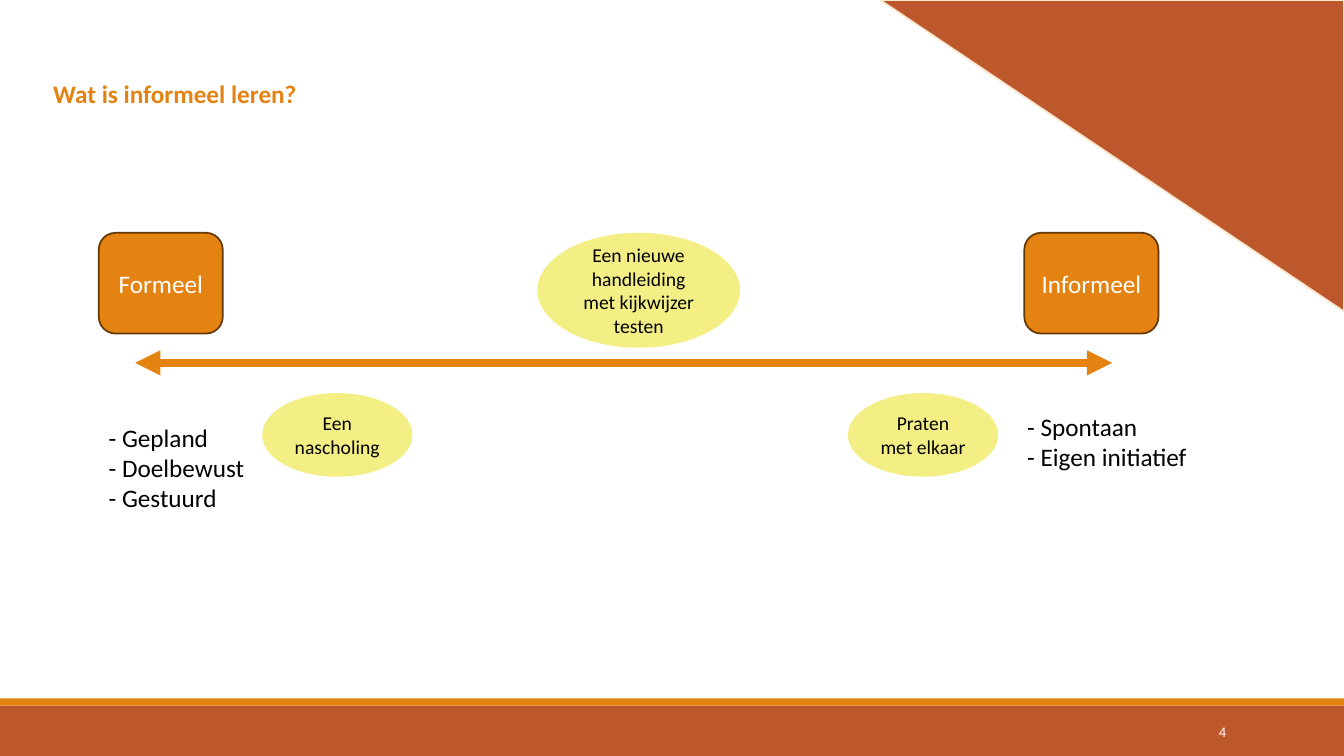
from lxml import etree
from pptx import Presentation
from pptx.dml.color import RGBColor
from pptx.enum.shapes import MSO_CONNECTOR, MSO_SHAPE as SHAPE
from pptx.enum.text import MSO_ANCHOR as ANCHOR, PP_ALIGN as ALIGN
from pptx.oxml.ns import qn
from pptx.util import Inches, Pt

FONT = "Calibri"
COLORS = {
    "rust": "BD582C",
    "orange": "E48312",
    "peach": "FBE6CE",
    "brown": "643908",
    "yellow": "F4EF84",
    "white": "FFFFFF",
    "black": "000000",
}


def color(name):
    return RGBColor.from_string(COLORS[name])


def write_text(shape, text, size, font_color, align, anchor, bold=False):
    """Fill a shape with text, one paragraph for each line."""
    text_frame = shape.text_frame
    text_frame.text = text
    text_frame.vertical_anchor = anchor
    for paragraph in text_frame.paragraphs:
        paragraph.alignment = align
        for run in paragraph.runs:
            run.font.name = FONT
            run.font.size = Pt(size)
            run.font.bold = bold
            run.font.color.rgb = color(font_color)


def add_filled_shape(slide, kind, box, fill, outline=None):
    shape = slide.shapes.add_shape(kind, *map(Inches, box))
    shape.shadow.inherit = False
    shape.fill.solid()
    shape.fill.fore_color.rgb = color(fill)
    if outline:
        shape.line.color.rgb = color(outline)
        shape.line.width = Pt(1.25)
    else:
        shape.line.fill.background()
    return shape


def add_text(slide, box, text, size=18, font_color="black", align=ALIGN.LEFT,
             anchor=ANCHOR.TOP, bold=False, wrap=True):
    text_box = slide.shapes.add_textbox(*map(Inches, box))
    write_text(text_box, text, size, font_color, align, anchor, bold)
    text_box.text_frame.word_wrap = wrap


def add_pole(slide, left, width, text):
    """Add the box that names one end of the scale."""
    shape = add_filled_shape(slide, SHAPE.ROUNDED_RECTANGLE,
                             (left, 2.31, width, 1), "orange", "brown")
    write_text(shape, text, 18, "white", ALIGN.CENTER, ANCHOR.MIDDLE)


def add_example(slide, box, text):
    shape = add_filled_shape(slide, SHAPE.OVAL, box, "yellow")
    write_text(shape, text, 14, "black", ALIGN.CENTER, ANCHOR.MIDDLE)


def add_double_arrow(slide, left, right, top):
    arrow = slide.shapes.add_connector(
        MSO_CONNECTOR.STRAIGHT, Inches(left), Inches(top), Inches(right), Inches(top))
    arrow.line.color.rgb = color("orange")
    arrow.line.width = Pt(6)
    line = arrow.line._get_or_add_ln()
    for end in ("a:headEnd", "a:tailEnd"):
        etree.SubElement(line, qn(end), type="triangle")
    etree.SubElement(arrow._element.spPr, qn("a:effectLst"))


def add_decoration(slide):
    add_filled_shape(slide, SHAPE.RECTANGLE, (0, 7, 13.33, 0.5), "rust")
    add_filled_shape(slide, SHAPE.RECTANGLE, (0, 6.93, 13.33, 0.07), "orange")
    corner = add_filled_shape(slide, SHAPE.RIGHT_TRIANGLE,
                              (8.73, 0, 4.6, 3.09), "rust", "peach")
    corner.rotation = 180
    add_text(slide, (10.83, 7.06, 1.43, 0.4), "4", 10.5, "white",
             ALIGN.RIGHT, ANCHOR.MIDDLE)


def main():
    presentation = Presentation()
    presentation.slide_width = Inches(13.33)
    presentation.slide_height = Inches(7.5)
    slide = presentation.slides.add_slide(presentation.slide_layouts[6])

    add_decoration(slide)
    add_text(slide, (0.43, 0.73, 2.64, 0.4), "Wat is informeel leren?",
             font_color="orange", bold=True, wrap=False)

    add_double_arrow(slide, 1.34, 11.03, 3.6)
    add_pole(slide, 0.98, 1.23, "Formeel")
    add_pole(slide, 10.16, 1.33, "Informeel")
    add_text(slide, (0.98, 4.14, 3.24, 1.01), "- Gepland\n- Doelbewust\n- Gestuurd")
    add_text(slide, (10.09, 4.03, 3.24, 0.71), "- Spontaan\n- Eigen initiatief")

    add_example(slide, (2.6, 3.9, 1.49, 0.83), "Een nascholing")
    add_example(slide, (5.33, 2.31, 2.01, 1.14),
                "Een nieuwe handleiding met kijkwijzer testen")
    add_example(slide, (8.41, 3.9, 1.49, 0.83), "Praten met elkaar")

    presentation.save("out.pptx")


if __name__ == "__main__":
    main()
